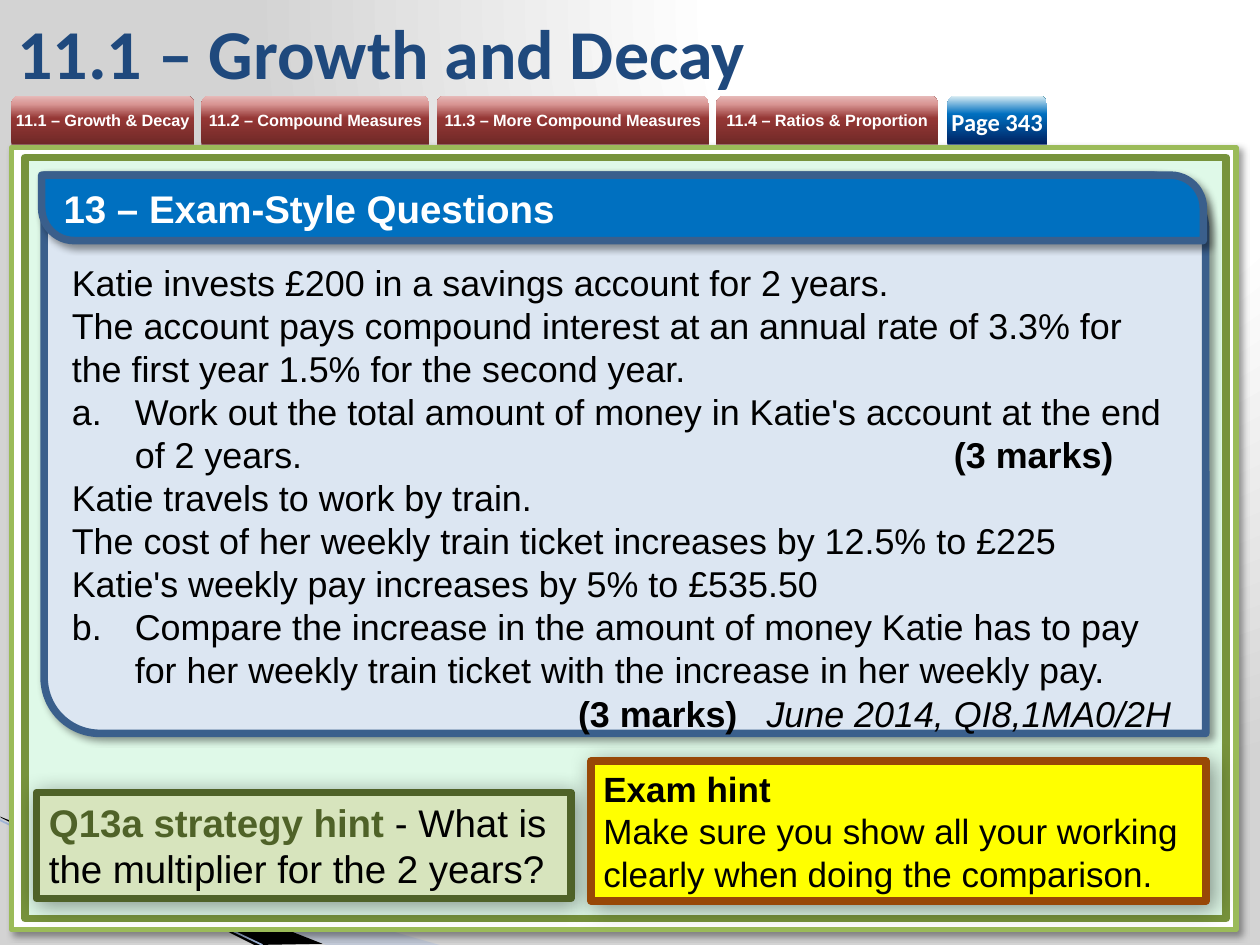
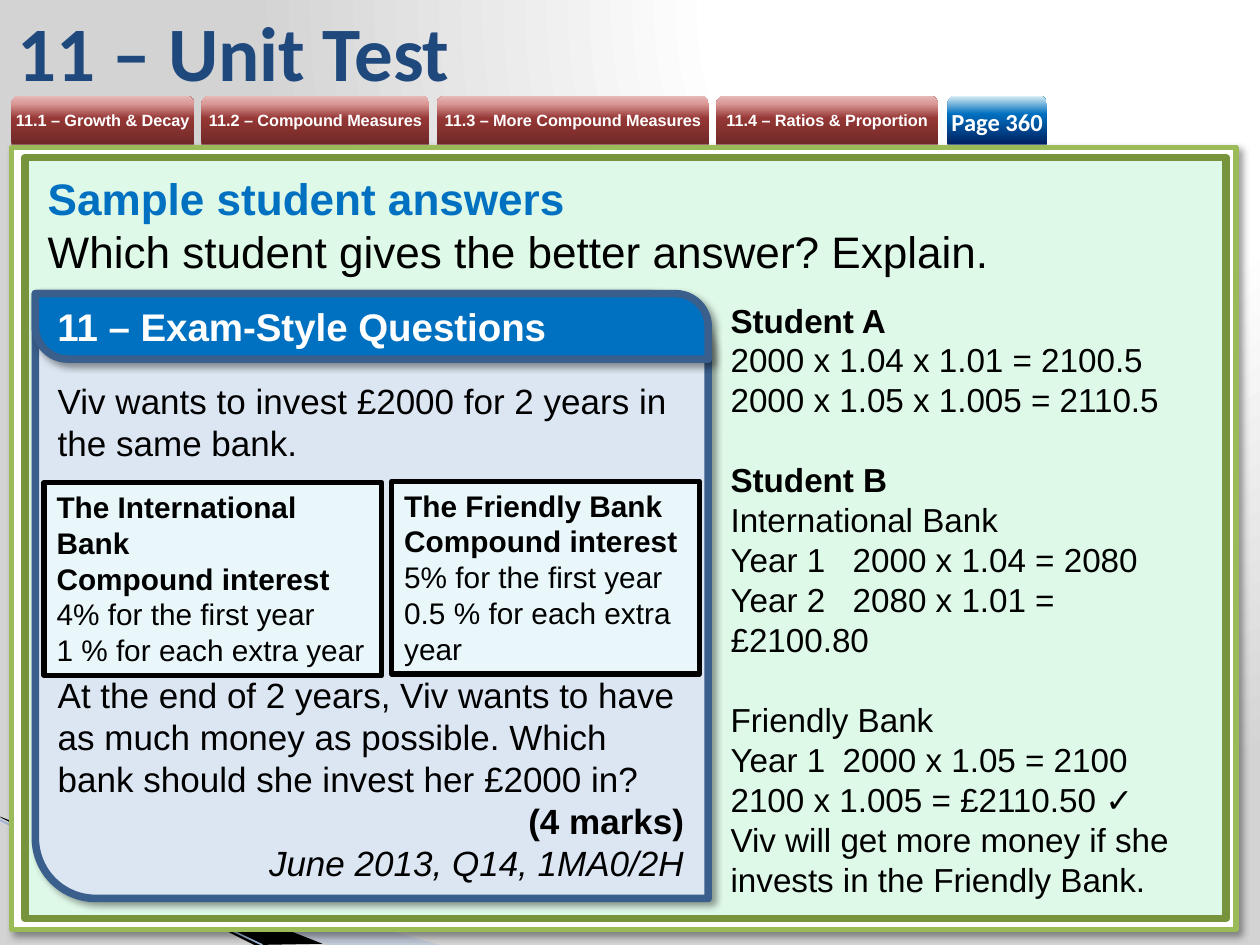
from pptx import Presentation
from pptx import util as u
from pptx.dml import color
from pptx.enum import shapes, text
from pptx.oxml import parse_xml
from pptx.oxml.ns import nsdecls, qn

Pt = u.Pt
Kind = shapes.MSO_SHAPE
Side = text.PP_ALIGN
Hold = text.MSO_ANCHOR

BLACK, WHITE, NAVY, BLUE = "000000", "FFFFFF", "1F497D", "0070C0"
EDGE, OLIVE = "3A5F8C", "4F6228"
RED = [(0, "6F2927"), (54, "953735"), (83, "D99694"), (100, "E6B9B8")]
SEA = [(0, "002060"), (63, BLUE), (100, "DBEEF4")]
FADE = [(0, WHITE), (40, WHITE), (100, "D3D3D3")]
RISE = '<a:lin ang="16200000" scaled="0"/>'
GLOW = '<a:path path="circle"><a:fillToRect l="65000" t="0" r="0" b="98000"/></a:path>'
SOFT, DEEP = 4, 13
THICK = 4.33

TABS = [
    ("11.1 – Growth & Decay", 104.4),
    ("11.2 – Compound Measures", 130.3),
    ("11.3 – More Compound Measures", 155.5),
    ("11.4 – Ratios & Proportion", 126.7),
]
TAB_X, TAB_Y, TAB_H, TAB_GAP = 6.5, 54.7, 28, 4.2
PAGE_X, PAGE_W = 541.4, 56.9
BAND_H = 37.4

INVEST = [
    "Katie invests £200 in a savings account for 2 years.",
    "The account pays compound interest at an annual rate of 3.3% for the first year "
    "1.5% for the second year.",
    dict(runs=["Work out the total amount of money in Katie's account at the end of 2 years.\t",
               ("(3 marks)", "b")], item=1, tabs=[(630, "r")]),
    "Katie travels to work by train.",
    "The cost of her weekly train ticket increases by 12.5% to £225",
    "Katie's weekly pay increases by 5% to £535.50",
    dict(runs=["Compare the increase in the amount of money Katie has to pay for her weekly "
               "train ticket with the increase in her weekly pay."], item=2),
    dict(runs=[("\t(3 marks)\t", "b"), ("June 2014, QI8,1MA0/2H", "i")],
         tabs=[(380.5, "r"), (397, "l")]),
]
PLAN = [dict(runs=[("Q13a strategy hint ", "b", OLIVE),
                   "- What is the multiplier for the 2 years?"])]
EXAM = [
    dict(runs=[("Exam hint", "b")]),
    "Make sure you show all your working clearly when doing the comparison.",
]
INTRO = [
    dict(runs=[("Sample student answers", "b", BLUE)]),
    "Which student gives the better answer? Explain.",
]
VIV = [
    "Viv wants to invest £2000 for 2 years in the same bank.",
    dict(runs=["At the end of 2 years, Viv wants to have as much money as possible. "
               "Which bank should she invest her £2000 in?"], before=120),
    dict(runs=[("(4 marks)", "b")], align=Side.RIGHT),
    dict(runs=[("June 2013, Q14, 1MA0/2H", "i")], align=Side.RIGHT),
]
BANKS = [
    ("The International Bank", "4% for the first year", "1 % for each extra year",
     (25.2, 275.8, 193, 110.2)),
    ("The Friendly Bank", "5% for the first year", "0.5 % for each extra year",
     (223.9, 275, 175.7, 110.2)),
]
STUDENT = [
    dict(runs=[("Student A", "b")]),
    "2000 x 1.04 x 1.01 = 2100.5",
    "2000 x 1.05 x 1.005 = 2110.5",
    dict(runs=[("Student B", "b")], before=23),
    "International Bank",
    dict(runs=["Year 1\t2000 x 1.04 = 2080"], tabs=[(69.8, "l")]),
    dict(runs=["Year 2\t2080 x 1.01 = £2100.80"], tabs=[(69.8, "l")]),
    dict(runs=["Friendly Bank"], before=23),
    dict(runs=["Year 1\t2000 x 1.05 = 2100"], tabs=[(64, "l")]),
    "2100 x 1.005 = £2110.50 ✓",
    "Viv will get more money if she invests in the Friendly Bank.",
]


def rgb(code):
    return color.RGBColor.from_string(code)


def node(tag, body="", **attrs):
    pairs = "".join(f' {k}="{v}"' for k, v in attrs.items())
    return parse_xml(f'<a:{tag} {nsdecls("a")}{pairs}>{body}</a:{tag}>')


def blend(fill, root, stops, way):
    fill.gradient()
    old = next(root.iter(qn("a:gradFill")))
    body = "".join(f'<a:gs pos="{p * 1000}"><a:srgbClr val="{c}"/></a:gs>' for p, c in stops)
    new = node("gradFill", f"<a:gsLst>{body}</a:gsLst>{way}", rotWithShape=1)
    old.getparent().replace(old, new)


def shade(shape, blur):
    glow = (f'<a:outerShdw blurRad="{Pt(blur)}" dist="{Pt(3)}" dir="2700000" algn="tl" '
            f'rotWithShape="0"><a:srgbClr val="{BLACK}"><a:alpha val="40000"/>'
            '</a:srgbClr></a:outerShdw>')
    spot = shape._element.spPr.find(qn("a:effectLst"))
    spot.getparent().replace(spot, node("effectLst", glow))


def write(shape, paras, size=20, ink=BLACK, font="Arial", bold=False, align=Side.LEFT,
          anchor=Hold.TOP, pad=None, wrap=True, lead=None):
    frame = shape.text_frame
    frame.word_wrap = wrap
    frame.vertical_anchor = anchor
    if pad is not None:
        frame.margin_left = frame.margin_right = Pt(pad)
        frame.margin_top = frame.margin_bottom = Pt(pad)
    for n, part in enumerate(paras):
        part = dict(runs=[part]) if isinstance(part, str) else part
        para = frame.paragraphs[0] if n == 0 else frame.add_paragraph()
        props = para._p.get_or_add_pPr()
        if "item" in part:
            props.set("marL", str(Pt(36)))
            props.set("indent", str(-Pt(36)))
            props.append(node("buAutoNum", type="alphaLcPeriod", startAt=part["item"]))
        if "tabs" in part:
            stops = "".join(f'<a:tab pos="{Pt(x)}" algn="{a}"/>' for x, a in part["tabs"])
            props.append(node("tabLst", stops))
        para.alignment = part.get("align", align)
        if "before" in part:
            para.space_before = Pt(part["before"])
        if lead:
            para.line_spacing = Pt(lead)
        for bit in part["runs"]:
            words, style, *tint = (bit, "") if isinstance(bit, str) else bit
            run = para.add_run()
            run.text = words
            run.font.name, run.font.size = font, Pt(size)
            run.font.bold = bold or style == "b"
            run.font.italic = style == "i"
            run.font.color.rgb = rgb(tint[0] if tint else ink)


def note(slide, box, paras, **style):
    write(slide.shapes.add_textbox(*map(Pt, box)), paras, **style)


def block(slide, box, fill, line=None, width=THICK, kind=Kind.RECTANGLE, blur=None, adj=()):
    shape = slide.shapes.add_shape(kind, *map(Pt, box))
    shape.shadow.inherit = False
    for n, val in enumerate(adj):
        shape.adjustments[n] = val
    if isinstance(fill, list):
        blend(shape.fill, shape._element, fill, RISE)
    else:
        shape.fill.solid()
        shape.fill.fore_color.rgb = rgb(fill)
    if line:
        shape.line.color.rgb = rgb(line)
        shape.line.width = Pt(width)
    else:
        shape.line.fill.background()
    if blur:
        shade(shape, blur)
    return shape


def wedge(slide, points, fill, alpha=None):
    (x, y), *rest = [(Pt(a), Pt(b)) for a, b in points]
    form = slide.shapes.build_freeform(x, y)
    form.add_line_segments(rest)
    shape = form.convert_to_shape()
    shape.shadow.inherit = False
    shape.fill.solid()
    shape.fill.fore_color.rgb = rgb(fill)
    shape.line.fill.background()
    if alpha:
        tint = next(shape._element.spPr.iter(qn("a:srgbClr")))
        tint.append(node("alpha", val=alpha * 1000))


def tab(slide, x, width, label, fill, **style):
    shape = block(slide, (x, TAB_Y, width, TAB_H), fill, kind=Kind.ROUND_2_SAME_RECTANGLE)
    write(shape, [label], ink=WHITE, bold=True, align=Side.CENTER, anchor=Hold.MIDDLE,
          pad=0, wrap=False, **style)


def base(deck, title, size, page):
    slide = deck.slides.add_slide(deck.slide_layouts[6])
    blend(slide.background.fill, slide._element, FADE, GLOW)
    wedge(slide, [(0, 468), (251.3, 540), (186.5, 540), (0, 467.3)], "A7B9DB", 40)
    wedge(slide, [(0, 466.6), (184.3, 539.3), (145.4, 540), (0.7, 467.3)], BLACK)
    rule = slide.shapes.add_connector(shapes.MSO_CONNECTOR.STRAIGHT,
                                      *map(Pt, (0, 468.7, 150, 540)))
    rule.line.color.rgb = rgb("9EB3D6")
    rule.line.width = Pt(0.95)
    rule._element.spPr.append(node("effectLst"))
    block(slide, (6.5, 84.2, 699.8, 447.1), WHITE, "9BBB59", 3, blur=SOFT)
    block(slide, (14.4, 90, 686.2, 434.9), "DFF9E8", "77933C")
    x = TAB_X
    for label, width in TABS:
        tab(slide, x, width, label, RED, size=9.3, lead=10)
        x += width + TAB_GAP
    note(slide, (2.9, 3.6, 595.4, 51.1), [title], size=size, ink=NAVY, font="Calibri",
         bold=True, anchor=Hold.MIDDLE)
    tab(slide, PAGE_X, PAGE_W, page, SEA, size=14, font="Calibri")
    return slide


def card(slide, box, shift, head):
    x, y, width, _ = box
    look = dict(line=EDGE, kind=Kind.ROUND_2_DIAG_RECTANGLE, blur=SOFT)
    block(slide, box, "DCE6F2", adj=(0, 0.1), **look)
    band = block(slide, (x - shift, y, width, BAND_H), BLUE, adj=(0, 0.5), **look)
    write(band, [head], size=22, ink=WHITE, bold=True, anchor=Hold.MIDDLE)


def growth(deck):
    slide = base(deck, "11.1 – Growth and Decay", 40, "Page 343")
    card(slide, (25.2, 100.1, 663.8, 319), 1.4, "13 – Exam-Style Questions")
    note(slide, (34, 145.4, 645.5, 280.8), INVEST, size=20.5)
    hint = block(slide, (20.9, 452.9, 305.3, 60.5), "D7E4BD", OLIVE, blur=DEEP)
    write(hint, PLAN, size=22, anchor=Hold.MIDDLE)
    exam = block(slide, (337.7, 434.9, 351.4, 79.9), "FFFF00", "984807", blur=DEEP)
    write(exam, EXAM, size=20, anchor=Hold.MIDDLE)


def test(deck):
    slide = base(deck, "11 – Unit Test", 44, "Page 360")
    note(slide, (20.2, 94.3, 626.4, 68.4), INTRO, size=25.2)
    card(slide, (20.2, 167.8, 384.5, 345.6), 0, "11 – Exam-Style Questions")
    note(slide, (25.9, 213.1, 372.2, 298), VIV, size=20)
    for name, first, extra, box in BANKS:
        bank = block(slide, box, "E9F7FA", BLACK, 3)
        heads = [dict(runs=[(line, "b")]) for line in (name, "Compound interest")]
        write(bank, heads + [first, extra], size=17)
    note(slide, (410.4, 167.8, 282.2, 352.8), STUDENT, size=19)


def main():
    deck = Presentation()
    deck.slide_width, deck.slide_height = Pt(720), Pt(540)
    growth(deck)
    test(deck)
    deck.save("out.pptx")


if __name__ == "__main__":
    main()
